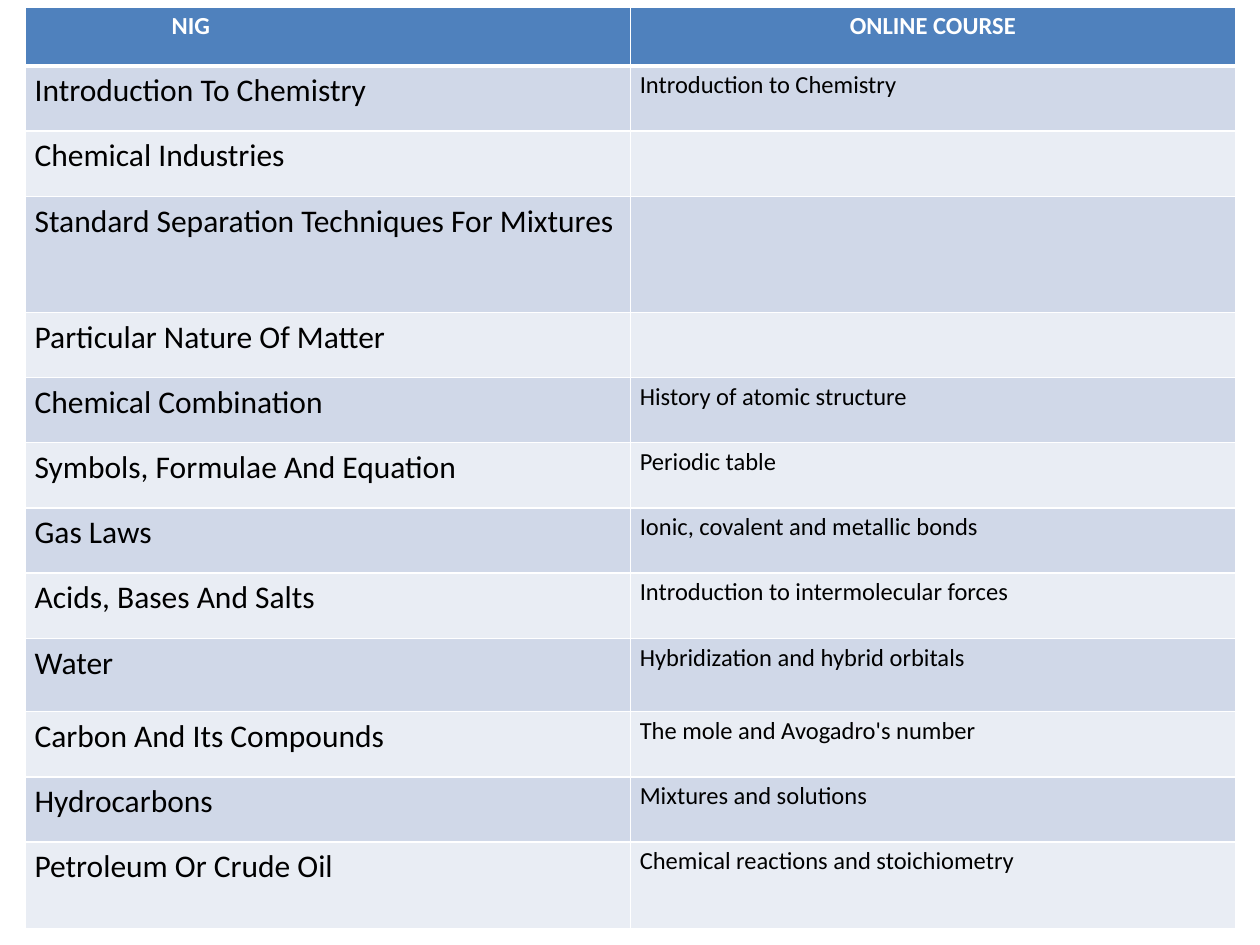
from lxml import etree
from pptx import Presentation
from pptx.dml.color import RGBColor
from pptx.enum.text import PP_ALIGN
from pptx.oxml.ns import qn
from pptx.util import Pt

CENTER = PP_ALIGN.CENTER
LEFT = PP_ALIGN.LEFT

COLORS = {
    "head": "4F81BD",
    "odd": "D0D8E8",
    "even": "E9EDF4",
    "white": "FFFFFF",
    "black": "000000",
}

HEADS = ("\t\tNIG", "ONLINE COURSE")
TOPICS = [
    ("Introduction To Chemistry", "Introduction to Chemistry"),
    ("Chemical Industries", ""),
    ("Standard Separation Techniques For Mixtures", ""),
    ("Particular Nature Of Matter", ""),
    ("Chemical Combination", "History of atomic structure"),
    ("Symbols, Formulae And Equation", "Periodic table"),
    ("Gas Laws", "Ionic, covalent and metallic bonds"),
    ("Acids, Bases And Salts", "Introduction to intermolecular forces"),
    ("Water", "Hybridization and hybrid orbitals"),
    ("Carbon And Its Compounds", "The mole and Avogadro's number"),
    ("Hydrocarbons", "Mixtures and solutions"),
    ("Petroleum Or Crude Oil", "Chemical reactions and stoichiometry"),
]
ROW = 37.3
TALL = {0: 33.8, 3: 66.2, 9: 41.8, 12: 49.7}
TABS = ((39, "l"), (89.3, "ctr"))


class Deck:
    font = "Calibri"
    lines = 1.15
    inset = 5.4

    def __init__(self, wide, high):
        self.show = Presentation()
        self.show.slide_width = Pt(wide)
        self.show.slide_height = Pt(high)
        self.slide = self.show.slides.add_slide(self.show.slide_layouts[6])

    def color(self, name):
        return RGBColor.from_string(COLORS[name])

    def table(self, left, top, wide, rows, highs):
        cols = len(rows[0])
        frame = self.slide.shapes.add_table(
            len(rows), cols, Pt(left), Pt(top), Pt(wide), Pt(sum(highs)))
        grid = frame.table
        for col in grid.columns:
            col.width = Pt(wide / cols)
        for row, high in zip(grid.rows, highs):
            row.height = Pt(high)
        return grid

    def cell(self, cell, text, size, ink, fill, bold=False, align=LEFT):
        cell.fill.solid()
        cell.fill.fore_color.rgb = self.color(fill)
        cell.margin_left = cell.margin_right = Pt(self.inset)
        cell.margin_top = cell.margin_bottom = 0
        para = cell.text_frame.paragraphs[0]
        para.text = text
        para.alignment = align
        para.line_spacing = self.lines
        font = para.font
        font.name = self.font
        font.size = Pt(size)
        font.bold = bold
        font.color.rgb = self.color(ink)

    def border(self, cell, top=1, base=1):
        props = cell._tc.get_or_add_tcPr()
        sides = (("L", 1), ("R", 1), ("T", top), ("B", base))
        for spot, (side, width) in enumerate(sides):
            line = etree.Element(qn("a:ln" + side), w=str(Pt(width)))
            fill = etree.SubElement(line, qn("a:solidFill"))
            etree.SubElement(fill, qn("a:srgbClr"), val=COLORS["white"])
            props.insert(spot, line)

    def tabs(self, cell, stops):
        props = cell.text_frame.paragraphs[0]._p.get_or_add_pPr()
        group = etree.Element(qn("a:tabLst"))
        for place, align in stops:
            etree.SubElement(group, qn("a:tab"), pos=str(Pt(place)), algn=align)
        props.find(qn("a:lnSpc")).addnext(group)

    def save(self):
        self.show.save("out.pptx")


def main():
    deck = Deck(720, 540)
    rows = [HEADS] + TOPICS
    highs = [TALL.get(num, ROW) for num in range(len(rows))]
    grid = deck.table(14.4, 3.9, 691.6, rows, highs)

    for col, text in enumerate(HEADS):
        cell = grid.cell(0, col)
        align = CENTER if col else LEFT
        deck.cell(cell, text, 14, "white", "head", True, align)
        deck.border(cell, base=3)
    deck.tabs(grid.cell(0, 0), TABS)

    for num, topic in enumerate(TOPICS, 1):
        fill = "odd" if num % 2 else "even"
        for col, (text, size) in enumerate(zip(topic, (18, 14))):
            cell = grid.cell(num, col)
            deck.cell(cell, text, size, "black", fill)
            deck.border(cell, top=3 if num == 1 else 1)

    deck.save()


if __name__ == "__main__":
    main()
